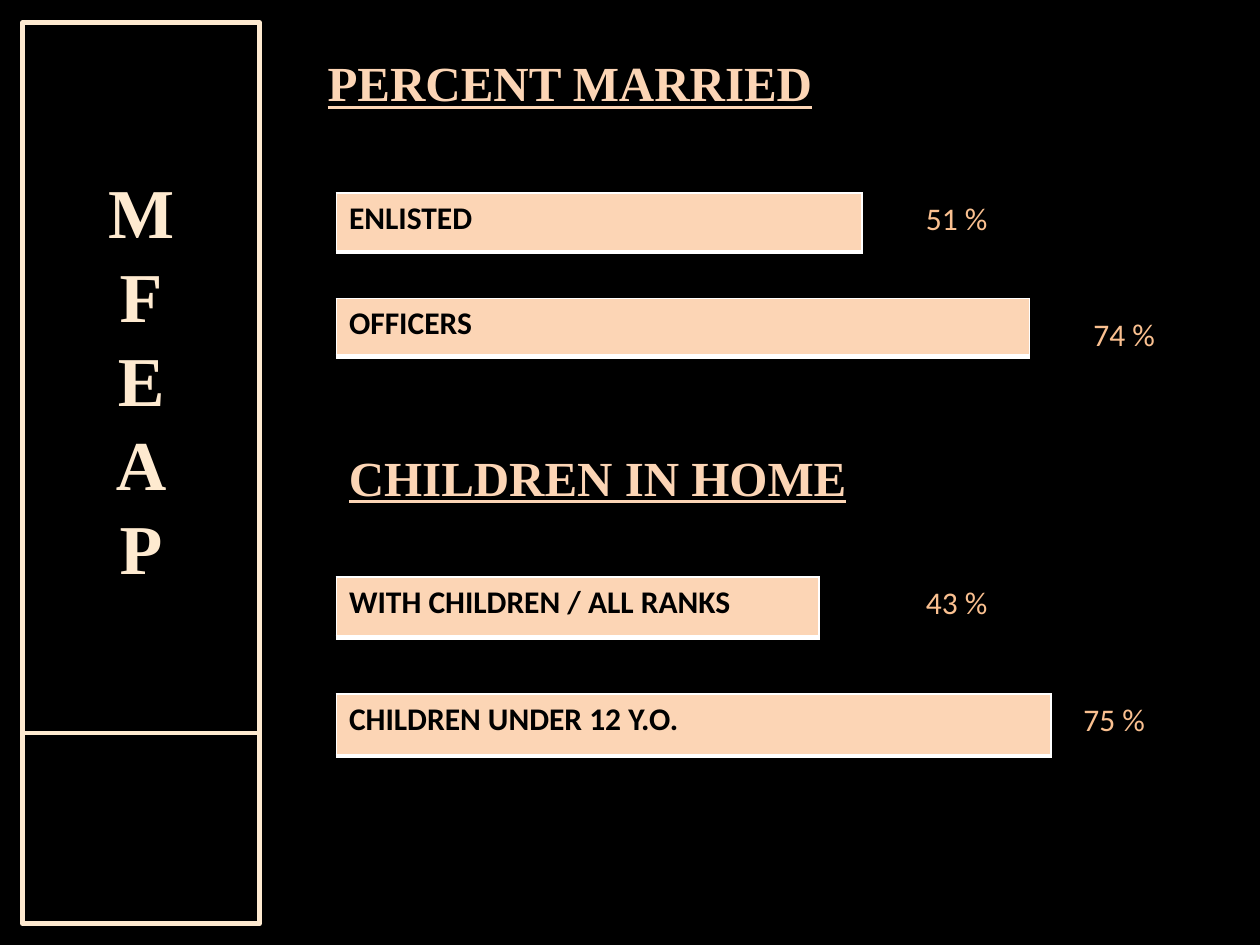
from lxml.etree import SubElement
from pptx import Presentation
from pptx.dml.color import RGBColor
from pptx.enum.shapes import MSO_CONNECTOR, MSO_SHAPE
from pptx.enum.text import MSO_ANCHOR, MSO_AUTO_SIZE, PP_ALIGN
from pptx.oxml.ns import qn
from pptx.util import Inches, Pt

BLACK = RGBColor(0x00, 0x00, 0x00)
WHITE = RGBColor(0xFF, 0xFF, 0xFF)
CREAM = RGBColor(0xFE, 0xEA, 0xD0)
PEACH = RGBColor(0xFC, 0xD5, 0xB5)
ORANGE = RGBColor(0xFA, 0xC0, 0x90)
SERIF = "Times New Roman"
SANS = "Calibri"
BAR_LEFT = 2.67

# label, bar top, bar width, bar height, percent, percent left, top, width
BARS = [
    ("ENLISTED", 1.53, 4.17, 0.47, "51 %", 7.25, 1.53, 1.75),
    ("OFFICERS", 2.37, 5.5, 0.46, "74 %", 8.58, 2.45, 1.11),
    ("WITH CHILDREN / ALL RANKS", 4.58, 3.83, 0.48, "43 %", 7.25, 4.58, 1.38),
    ("CHILDREN UNDER 12 Y.O.", 5.51, 5.67, 0.49, "75 %", 8.5, 5.51, 1.22),
]


def place(shape, left, top, width, height):
    shape.left, shape.top = Inches(left), Inches(top)
    shape.width, shape.height = Inches(width), Inches(height)


def write(frame, text, size, name, color, bold=False, underline=False,
          align=PP_ALIGN.LEFT):
    frame.text = text
    paragraph = frame.paragraphs[0]
    paragraph.alignment = align
    font = paragraph.font
    font.size, font.name, font.color.rgb = Pt(size), name, color
    font.bold, font.underline = bold, underline


def fit_to_text(frame):
    frame.word_wrap = True
    frame.auto_size = MSO_AUTO_SIZE.SHAPE_TO_FIT_TEXT
    frame.vertical_anchor = MSO_ANCHOR.TOP


def add_heading(shape, text, left, top, width):
    place(shape, left, top, width, 0.57)
    fit_to_text(shape.text_frame)
    write(shape.text_frame, text, 28, SERIF, PEACH, bold=True, underline=True)


def add_percent(slide, text, left, top, width):
    box = slide.shapes.add_textbox(Inches(left), Inches(top), Inches(width), Inches(0.4))
    fit_to_text(box.text_frame)
    write(box.text_frame, text, 18, SANS, ORANGE)


def add_border(cell, side, color, points):
    properties = cell._tc.get_or_add_tcPr()
    line = SubElement(properties, qn(f"a:ln{side}"), w=str(Pt(points)))
    fill = SubElement(line, qn("a:solidFill"))
    SubElement(fill, qn("a:srgbClr"), val=str(color))


def add_bar(slide, label, top, width, height):
    table = slide.shapes.add_table(1, 1, Inches(BAR_LEFT), Inches(top),
                                   Inches(width), Inches(height)).table
    table.first_row = table.horz_banding = False
    cell = table.cell(0, 0)
    for side, points in (("L", 1), ("R", 1), ("T", 1), ("B", 3)):
        add_border(cell, side, WHITE, points)
    cell.fill.solid()
    cell.fill.fore_color.rgb = PEACH
    write(cell.text_frame, label, 18, SANS, BLACK, bold=True)


def add_side_panel(slide):
    # Divider near the foot of the panel
    divider = slide.shapes.add_connector(MSO_CONNECTOR.STRAIGHT, Inches(0.18),
                                         Inches(5.82), Inches(2.06), Inches(5.82))
    divider.line.color.rgb, divider.line.width = CREAM, Pt(2.5)
    SubElement(divider._element.spPr, qn("a:effectLst"))

    # Frame with stacked letters
    panel = slide.shapes.add_shape(MSO_SHAPE.RECTANGLE, Inches(0.18), Inches(0.18),
                                   Inches(1.88), Inches(7.15))
    panel.shadow.inherit = False
    panel.fill.background()
    panel.line.color.rgb, panel.line.width = CREAM, Pt(3)
    frame = panel.text_frame
    frame.margin_left = frame.margin_right = Inches(0.1)
    frame.margin_top, frame.margin_bottom = Inches(0), Inches(1.5)
    frame.vertical_anchor = MSO_ANCHOR.MIDDLE
    frame._txBody.bodyPr.set("vert", "wordArtVert")
    write(frame, "MFEAP", 40, SERIF, CREAM, bold=True, align=PP_ALIGN.CENTER)


def main():
    deck = Presentation()
    deck.slide_width, deck.slide_height = Inches(10), Inches(7.5)
    slide = deck.slides.add_slide(deck.slide_layouts[5])
    slide.background.fill.solid()
    slide.background.fill.fore_color.rgb = BLACK

    add_side_panel(slide)

    # Section headings
    add_heading(slide.shapes.title, "PERCENT MARRIED", 2.5, 0.37, 5.75)
    children_heading = slide.shapes.add_textbox(0, 0, 0, 0)
    add_heading(children_heading, "CHILDREN IN HOME", BAR_LEFT, 3.5, 6.75)

    # Bars with their percentages
    for label, top, width, height, percent, *percent_place in BARS:
        add_bar(slide, label, top, width, height)
        add_percent(slide, percent, *percent_place)

    deck.save("out.pptx")


if __name__ == "__main__":
    main()
